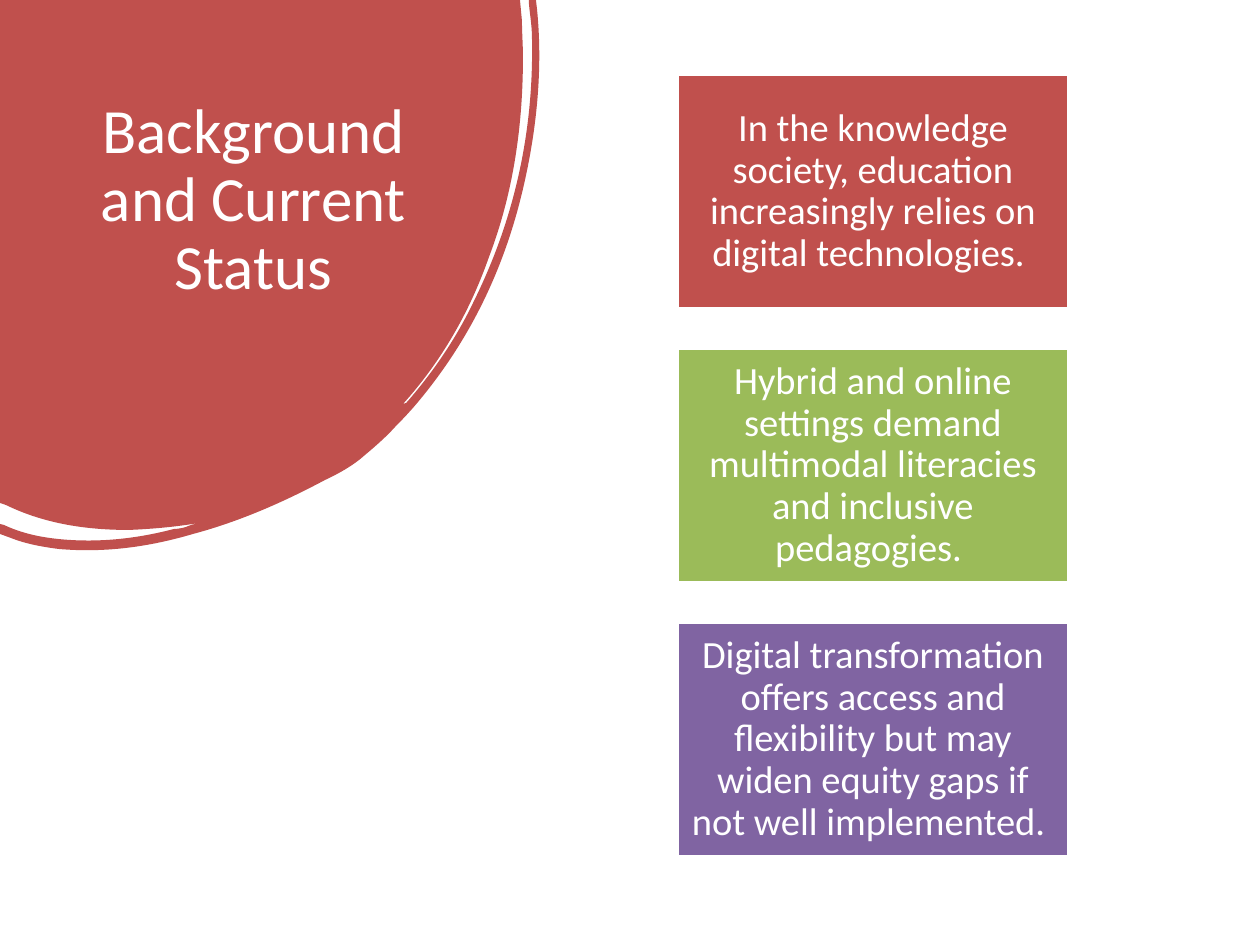
from pptx import Presentation
from pptx import util as u
from pptx.dml.color import RGBColor
from pptx.enum import shapes, text
from pptx.oxml import ns
from lxml import etree

SCALE = u.Inches(1) / 126
WHITE = RGBColor(0xFF, 0xFF, 0xFF)
RED = RGBColor(0xC0, 0x50, 0x4D)
GREEN = RGBColor(0x9B, 0xBB, 0x59)
PURPLE = RGBColor(0x80, 0x64, 0xA2)
FONT = "Calibri"

BLOB_OUTLINE = [
    (520, 0), (522, 21),
    (522, 33, 523, 45, 523, 57), (523, 127, 513, 194, 489, 257),
    (469, 314, 440, 363, 403, 404), (406, 404, 407, 402, 408, 401),
    (433, 372, 456, 339, 474, 301), (513, 222, 534, 135, 532, 38),
    (532, 26, 530, 15, 529, 4),
    (529, 0), (536, 0), (537, 9),
    (543, 68, 537, 129, 523, 189), (504, 270, 470, 338, 423, 396),
    (415, 406, 406, 416, 396, 426), (387, 436, 377, 445, 365, 455),
    (354, 465, 340, 473, 325, 480), (282, 503, 238, 522, 193, 534),
    (149, 547, 105, 553, 59, 549), (43, 547, 26, 544, 11, 538),
    (0, 534), (0, 524), (4, 525),
    (21, 533, 39, 537, 58, 539), (97, 543, 136, 539, 174, 529),
    (178, 529, 183, 528, 186, 527), (190, 525, 195, 524, 199, 523),
    (175, 527, 152, 529, 129, 530), (87, 530, 45, 524, 6, 505),
    (0, 503),
]

CARDS = [
    (RED, "In the knowledge society, education increasingly relies on "
          "digital technologies. "),
    (GREEN, "Hybrid and online settings demand multimodal literacies and "
            "inclusive pedagogies. "),
    (PURPLE, "Digital transformation offers access and flexibility but may "
             "widen equity gaps if not well implemented. "),
]


def px(length):
    return u.Emu(round(length * SCALE))


def fill_shape(shape, color):
    shape.shadow.inherit = False
    shape.fill.solid()
    shape.fill.fore_color.rgb = color


def set_text(shape, content, size, anchor, margin_x, margin_y):
    frame = shape.text_frame
    frame.text = content
    frame.word_wrap = True
    frame.auto_size = text.MSO_AUTO_SIZE.NONE
    frame.vertical_anchor = anchor
    frame.margin_left = frame.margin_right = px(margin_x)
    frame.margin_top = frame.margin_bottom = px(margin_y)
    paragraph = frame.paragraphs[0]
    paragraph.alignment = text.PP_ALIGN.CENTER
    paragraph.line_spacing = 0.9
    paragraph.font.name = FONT
    paragraph.font.size = u.Pt(size)
    paragraph.font.color.rgb = WHITE
    return paragraph


def bend_segments(freeform, outline):
    lines = list(freeform._element.iter(ns.qn("a:lnTo")))
    for line, segment in zip(lines, outline):
        if len(segment) == 2:
            continue
        line.tag = ns.qn("a:cubicBezTo")
        for index in (0, 2):
            control = etree.Element(ns.qn("a:pt"), x=str(segment[index]),
                                    y=str(segment[index + 1]))
            line.insert(index // 2, control)


def add_blob(slide, left, top):
    builder = slide.shapes.build_freeform(0, 0, scale=SCALE)
    builder.add_line_segments([segment[-2:] for segment in BLOB_OUTLINE])
    blob = builder.convert_to_shape(px(left), px(top))
    bend_segments(blob, BLOB_OUTLINE)
    fill_shape(blob, RED)
    blob.line.fill.background()
    return blob


def add_title_blob(slide, left, top):
    blob = add_blob(slide, left, top)
    title = slide.shapes.title
    title._element.addprevious(blob._element)
    title.left, title.top = px(left + 87), px(top + 93)
    title.width, title.height = px(333), px(280)
    set_text(title, "Background and Current Status", 36,
             text.MSO_ANCHOR.TOP, 6, 6)


def add_cards(slide, left, top, width, height, gap):
    card_height = (height - gap * (len(CARDS) - 1)) / len(CARDS)
    for index, (color, content) in enumerate(CARDS):
        card = slide.shapes.add_shape(
            shapes.MSO_SHAPE.RECTANGLE, px(left),
            px(top + index * (card_height + gap)), px(width), px(card_height))
        fill_shape(card, color)
        card.line.color.rgb = WHITE
        card.line.width = u.Pt(2)
        paragraph = set_text(card, content, 22, text.MSO_ANCHOR.MIDDLE, 11, 4)
        paragraph.space_before = u.Pt(9)


def main():
    presentation = Presentation()
    presentation.slide_width = px(1260)
    presentation.slide_height = px(945)
    slide = presentation.slides.add_slide(presentation.slide_layouts[5])
    add_title_blob(slide, 0, 0)
    add_cards(slide, 677, 74, 392, 783, 39)
    presentation.save("out.pptx")


if __name__ == "__main__":
    main()
